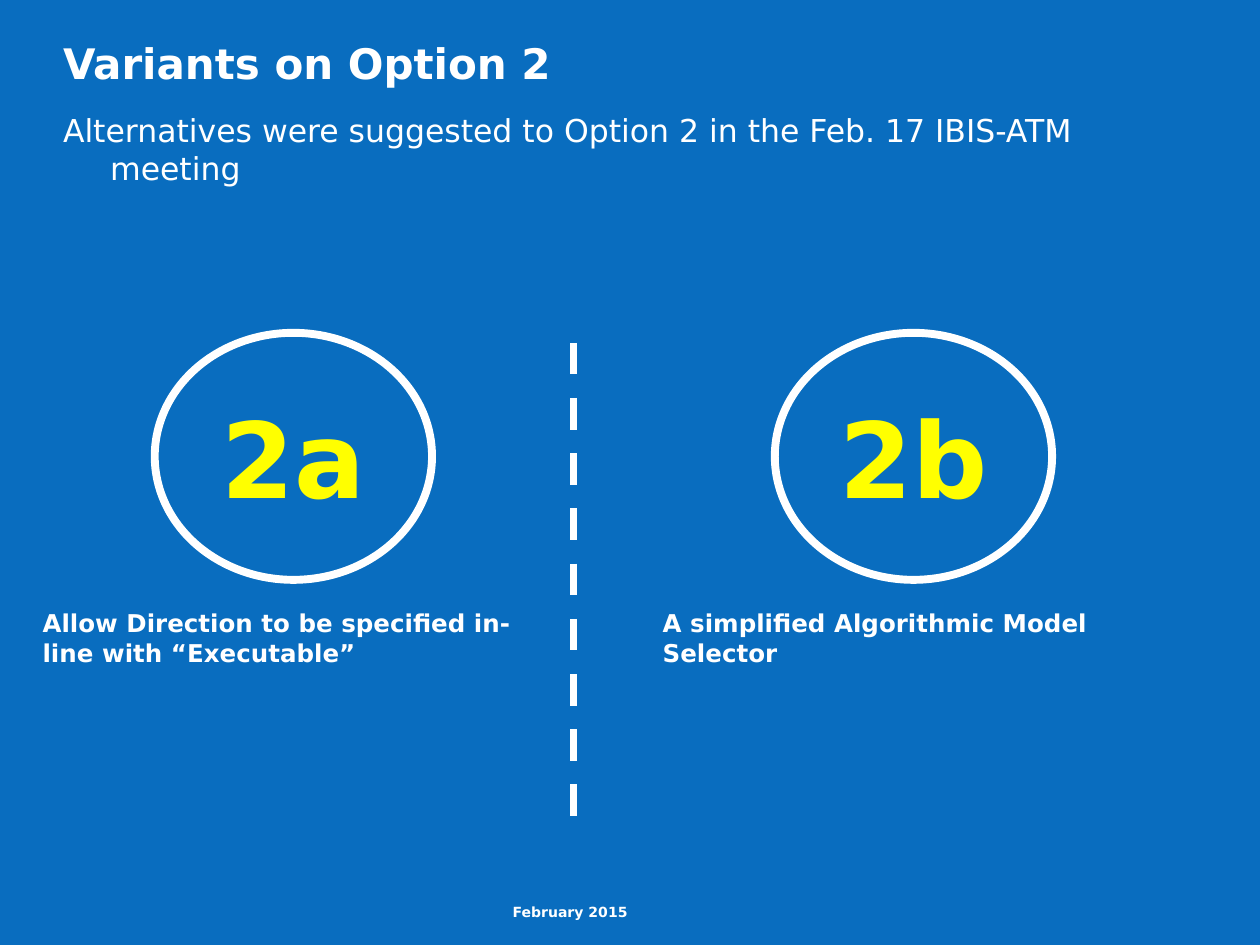
"""Build the slide that compares the two variants of Option 2."""
from lxml import etree
from pptx import Presentation
from pptx import util as u
from pptx.dml.color import RGBColor
from pptx.enum import dml, shapes, text
from pptx.oxml.ns import qn

COLORS = {"background": "096DBF", "white": "FFFFFF", "yellow": "FFFF00"}


class Deck:
    """Hold the style and the current slide."""

    font = "DejaVu Sans"
    stroke = u.Pt(4.5)

    def __init__(self, width, height):
        self.prs = Presentation()
        self.prs.slide_width, self.prs.slide_height = u.Cm(width), u.Cm(height)
        self.s = self.prs.slides.add_slide(self.prs.slide_layouts[1])
        fill = self.s.background.fill
        fill.solid()
        fill.fore_color.rgb = self.color("background")

    def color(self, name):
        return RGBColor.from_string(COLORS[name])

    def add_text(self, sp, words, size, bold=True, color="white",
                 align=text.PP_ALIGN.LEFT, anchor=text.MSO_ANCHOR.TOP, inset=True):
        tf = sp.text_frame
        tf.word_wrap = True
        tf.auto_size = text.MSO_AUTO_SIZE.NONE
        tf.vertical_anchor = anchor
        if not inset:
            tf.margin_left = tf.margin_right = tf.margin_top = tf.margin_bottom = 0
        p = tf.paragraphs[0]
        p.alignment = align
        p.space_before = u.Pt(0)
        r = p.add_run()
        r.text = words
        r.font.name, r.font.size, r.font.bold = self.font, u.Pt(size), bold
        r.font.color.rgb = self.color(color)
        return p

    def place(self, sp, box):
        sp.left, sp.top, sp.width, sp.height = (u.Cm(v) for v in box)

    def title(self, words, box):
        sp = self.s.shapes.title
        self.place(sp, box)
        self.add_text(sp, words, 24, inset=False)

    def body(self, words, box, indent):
        sp = self.s.placeholders[1]
        self.place(sp, box)
        p = self.add_text(sp, words, 18, bold=False, inset=False)
        pPr = p._p.get_or_add_pPr()
        pPr.set("marL", str(u.Cm(indent)))
        pPr.set("indent", str(-u.Cm(indent)))
        etree.SubElement(pPr, qn("a:buNone"))

    def label(self, words, box, size, **style):
        sp = self.s.shapes.add_textbox(*(u.Cm(v) for v in box))
        self.add_text(sp, words, size, **style)

    def ellipse(self, words, box):
        sp = self.s.shapes.add_shape(shapes.MSO_SHAPE.OVAL, *(u.Cm(v) for v in box))
        sp.shadow.inherit = False
        sp.fill.background()
        sp.line.color.rgb = self.color("white")
        sp.line.width = self.stroke
        self.add_text(sp, words, 60, color="yellow", align=text.PP_ALIGN.CENTER,
                      anchor=text.MSO_ANCHOR.MIDDLE)

    def divider(self, x, top, bottom):
        line = self.s.shapes.add_connector(
            shapes.MSO_CONNECTOR.STRAIGHT, *(u.Cm(v) for v in (x, top, x, bottom)))
        line.line.color.rgb = self.color("white")
        line.line.width = self.stroke
        line.line.dash_style = dml.MSO_LINE.DASH
        etree.SubElement(line._element.spPr, qn("a:effectLst"))


def main():
    deck = Deck(25.4, 19.05)
    deck.title("Variants on Option 2", (1.27, 0.76, 22.89, 2.46))
    deck.body("Alternatives were suggested to Option 2 in the Feb. 17 IBIS-ATM meeting",
              (1.27, 2.24, 22.89, 13.64), 0.95)
    deck.label("February 2015", (4.93, 18.21, 13.13, 0.84), 8,
               align=text.PP_ALIGN.CENTER, inset=False)
    deck.divider(11.56, 6.91, 16.46)
    variants = (
        ("2a", "Allow Direction to be specified in-line with “Executable”", 1.45),
        ("2b", "A simplified Algorithmic Model Selector", 2.06),
    )
    for i, (name, caption, height) in enumerate(variants):
        shift = i * 12.5
        deck.ellipse(name, (3.12 + shift, 6.71, 5.59, 4.98))
        deck.label(caption, (0.61 + shift, 12.14, 10.6, height), 14)
    deck.prs.save("out.pptx")


if __name__ == "__main__":
    main()
